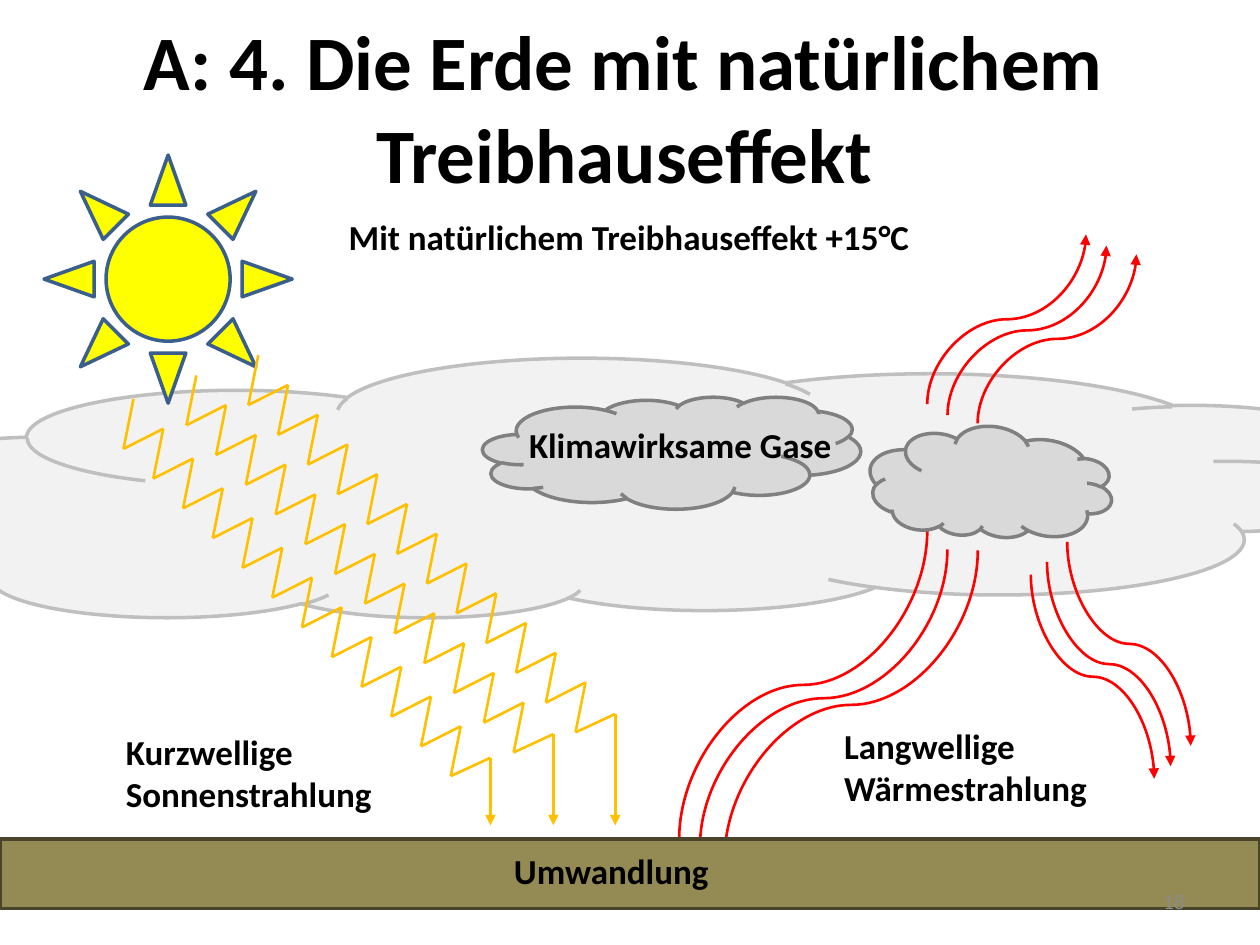
from lxml import etree
from pptx import Presentation
from pptx.dml.color import RGBColor
from pptx.enum.shapes import MSO_CONNECTOR, MSO_SHAPE
from pptx.enum.text import MSO_ANCHOR, MSO_AUTO_SIZE, PP_ALIGN
from pptx.oxml.ns import qn
from pptx.util import Pt

STRAIGHT, CURVE = MSO_CONNECTOR.STRAIGHT, MSO_CONNECTOR.CURVE
CLOUD, SUN, RECT = MSO_SHAPE.CLOUD, MSO_SHAPE.SUN, MSO_SHAPE.RECTANGLE
MIDDLE, TOP = MSO_ANCHOR.MIDDLE, MSO_ANCHOR.TOP
LEFT, CENTER, RIGHT = PP_ALIGN.LEFT, PP_ALIGN.CENTER, PP_ALIGN.RIGHT
FIXED = MSO_AUTO_SIZE.NONE

FONT = "Calibri"
BLACK = RGBColor(0x00, 0x00, 0x00)
GREY = RGBColor(0x8C, 0x8C, 0x8C)
SKY_FILL, SKY_LINE = RGBColor(0xF2, 0xF2, 0xF2), RGBColor(0xBF, 0xBF, 0xBF)
GAS_FILL, GAS_LINE = RGBColor(0xD9, 0xD9, 0xD9), RGBColor(0x80, 0x80, 0x80)
SUN_FILL, SUN_LINE = RGBColor(0xFF, 0xFF, 0x00), RGBColor(0x3A, 0x5F, 0x8C)
EARTH_FILL, EARTH_LINE = RGBColor(0x94, 0x8A, 0x54), RGBColor(0x4A, 0x45, 0x2A)
SUNLIGHT = RGBColor(0xFF, 0xC0, 0x00)
HEAT = RGBColor(0xFF, 0x00, 0x00)

ZIGZAGS = 12
ZIGZAG_STEP = 17
KINK = (-5.7, 28.5)
SUNRAY_END = 471.6

SUNRAY_STARTS = [(76.3, 228), (112.2, 214.5), (147.6, 203)]
RAYS_FROM_GROUND = [(388.1, 479.7, 529.9, 303.1), (400, 484, 541.4, 314),
                    (414, 491, 558.7, 314.6)]
RAYS_TO_SPACE = [(529.9, 231, 620.6, 134), (541.4, 237.3, 632.2, 140.4),
                 (558.7, 242, 649.4, 145.4)]
RAYS_BACK_DOWN = [(589, 328.3, 659.5, 445), (598.3, 321.1, 668.9, 437.8),
                  (609.8, 309.6, 680.4, 426.2)]


def add_filled(s, kind, box, fill, line, rotation=0):
    sp = s.shapes.add_shape(kind, *map(Pt, box))
    sp.shadow.inherit = False
    sp.fill.solid()
    sp.fill.fore_color.rgb = fill
    sp.line.color.rgb = line
    sp.line.width = Pt(2)
    sp.rotation = rotation


def format_text(tf, text, size, color=BLACK, bold=True, align=LEFT, anchor=TOP):
    tf.text = text
    tf.word_wrap = True
    tf.auto_size = FIXED
    tf.vertical_anchor = anchor
    p = tf.paragraphs[0]
    p.alignment = align
    font = p.runs[0].font
    font.name, font.size, font.bold = FONT, Pt(size), bold
    font.color.rgb = color


def add_label(s, text, box, size=20, **style):
    tb = s.shapes.add_textbox(*map(Pt, box))
    format_text(tb.text_frame, text, size, **style)


def add_title(s, text, box):
    title = s.shapes.title
    title.left, title.top, title.width, title.height = map(Pt, box)
    format_text(title.text_frame, text, 44, align=CENTER, anchor=MIDDLE)


def add_line(s, kind, x1, y1, x2, y2, color, arrow=False):
    c = s.shapes.add_connector(kind, Pt(x1), Pt(y1), Pt(x2), Pt(y2))
    c.line.color.rgb = color
    c.line.width = Pt(1.5)
    if arrow:
        etree.SubElement(c.line._get_or_add_ln(), qn("a:tailEnd"), type="triangle")
    etree.SubElement(c._element.spPr, qn("a:effectLst"))
    return c


def add_sunray(s, x, y):
    """Zigzag down to the right, then an arrow straight to the ground."""
    points = []
    for i in range(ZIGZAGS):
        px, py = x + i * ZIGZAG_STEP, y + i * ZIGZAG_STEP
        points += [(px, py), (px + KINK[0], py + KINK[1])]
    last = (x + ZIGZAGS * ZIGZAG_STEP, y + ZIGZAGS * ZIGZAG_STEP + 1)
    points.append(last)
    for start, end in zip(points, points[1:]):
        add_line(s, STRAIGHT, *start, *end, SUNLIGHT)
    add_line(s, STRAIGHT, *last, last[0], SUNRAY_END, SUNLIGHT, arrow=True)


def add_heat_ray(s, x1, y1, x2, y2, arrow=True):
    """S-curve that leaves and arrives vertically: a curve turned by a quarter."""
    cx, cy = (x1 + x2) / 2, (y1 + y2) / 2
    dx, dy = x1 - cx, y1 - cy
    upward = y2 < y1
    ux, uy = (dy, -dx) if upward else (-dy, dx)
    c = add_line(s, CURVE, cx + ux, cy + uy, cx - ux, cy - uy, HEAT, arrow)
    degrees = 90 if upward else 270
    c._element.spPr.find(qn("a:xfrm")).set("rot", str(degrees * 60000))


def main():
    prs = Presentation()
    prs.slide_width, prs.slide_height = Pt(720), Pt(540)
    s = prs.slides.add_slide(prs.slide_layouts[5])

    add_title(s, "A: 4. Die Erde mit natürlichem Treibhauseffekt",
              (14.4, 15.8, 684.7, 90))
    add_filled(s, CLOUD, (-105.1, 205.2, 895.7, 148.3), SKY_FILL, SKY_LINE, 180)
    # The atmosphere lies behind the title.
    s.shapes._spTree.append(s.shapes.title._element)
    add_filled(s, SUN, (25.2, 88.6, 141.8, 141.8), SUN_FILL, SUN_LINE)
    for start in SUNRAY_STARTS:
        add_sunray(s, *start)
    for ray in RAYS_FROM_GROUND:
        add_heat_ray(s, *ray, arrow=False)

    add_filled(s, RECT, (0, 479.5, 720, 39.6), EARTH_FILL, EARTH_LINE)
    add_label(s, "Umwandlung", (286.6, 481.7, 126.7, 31.7))
    add_label(s, "Mit natürlichem Treibhauseffekt +15°C", (192.2, 119.5, 357.1, 31.7))
    add_label(s, "Kurzwellige Sonnenstrahlung", (64.8, 414, 171.4, 55.4))
    add_label(s, "Langwellige Wärmestrahlung", (475.2, 410.4, 171.4, 55.4))

    add_filled(s, CLOUD, (275.8, 226.8, 216, 64), GAS_FILL, GAS_LINE)
    add_filled(s, CLOUD, (496.8, 244, 139, 64), GAS_FILL, GAS_LINE, 187.2)
    for ray in RAYS_TO_SPACE + RAYS_BACK_DOWN:
        add_heat_ray(s, *ray)
    add_label(s, "Klimawirksame Gase", (295.2, 238.3, 200.2, 31.7))
    add_label(s, "18", (516.2, 500.4, 167.8, 28.8), size=12, color=GREY,
              bold=False, align=RIGHT, anchor=MIDDLE)

    prs.save("out.pptx")


if __name__ == "__main__":
    main()
